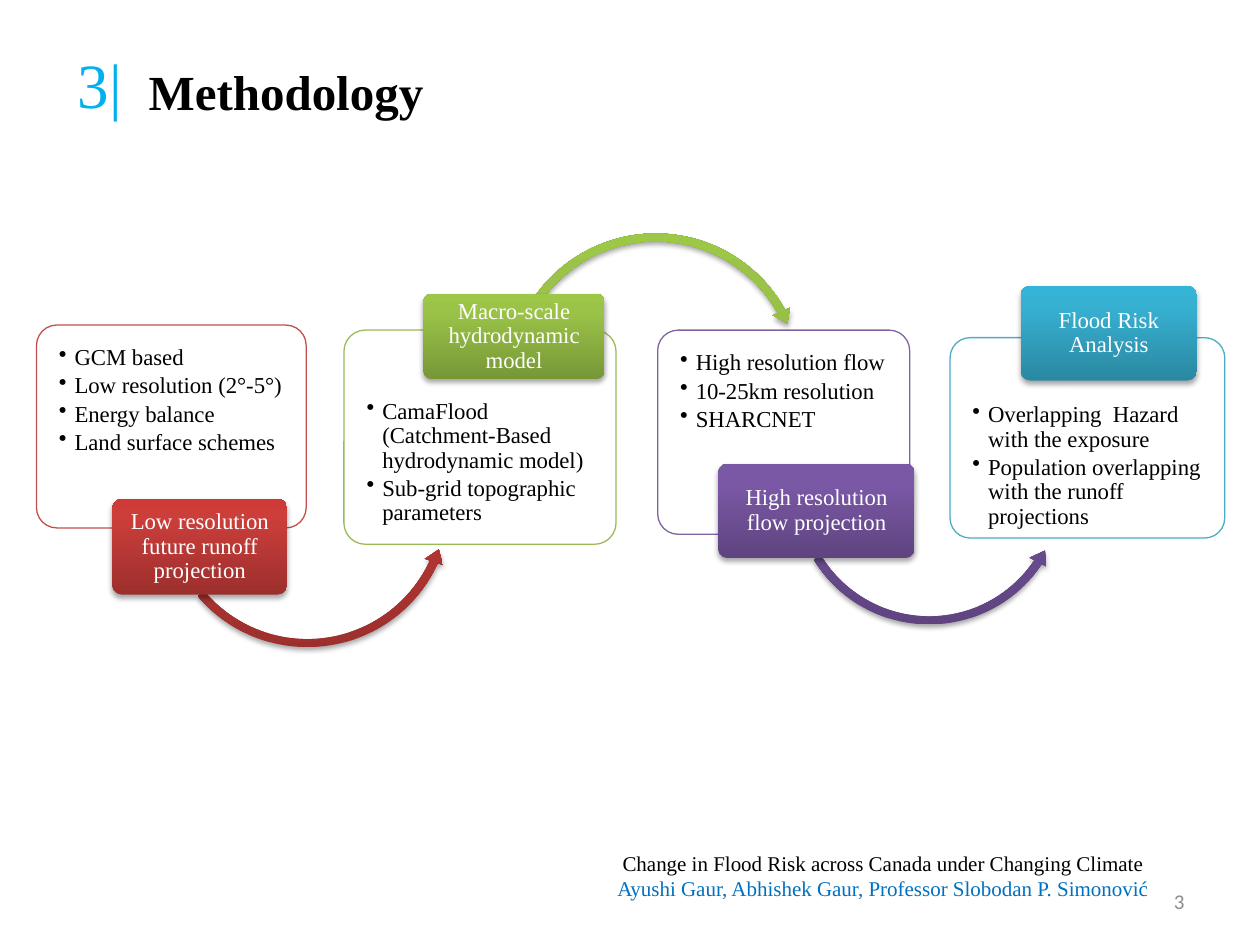
import copy
from dataclasses import dataclass
from typing import Optional

import pptx
import pptx.dml.color
import pptx.enum.shapes
import pptx.enum.text
import pptx.oxml.ns
import pptx.util
from lxml import etree

Inches = pptx.util.Inches
Pt = pptx.util.Pt
qn = pptx.oxml.ns.qn
Shapes = pptx.enum.shapes.MSO_SHAPE
Align = pptx.enum.text.PP_ALIGN
Anchor = pptx.enum.text.MSO_ANCHOR
SERIF = "Times New Roman"
Bounds = tuple[float, float, float, float]


@dataclass
class Arrow:
    preset: Shapes
    bounds: Bounds
    adjustments: tuple[float, ...]


@dataclass
class Stage:
    line: str
    gradient: tuple[str, str, str]  # bottom to top
    card: Bounds
    top_inset: float
    bullets: list[str]
    label: Bounds
    title: str
    arrow: Optional[Arrow] = None


STAGES = [
    Stage("C0504D", ("9C2F2D", "CB3E3A", "CE3B37"),
          (0.29, 2.58, 2.14, 1.61), 0.12,
          ["GCM based", "Low resolution (2°-5°)", "Energy balance",
           "Land surface schemes"],
          (0.89, 3.96, 1.39, 0.76), "Low resolution future runoff projection",
          Arrow(Shapes.LEFT_CIRCULAR_ARROW, (1.26, 2.82, 2.36, 2.36),
                (0.027, 3.307, 14.763, 83.946, 0.032))),
    Stage("9BBB59", ("779737", "9BC348", "9DC746"),
          (2.73, 2.62, 2.16, 1.7), 0.5,
          ["CamaFlood (Catchment-Based hydrodynamic model)",
           "Sub-grid topographic parameters"],
          (3.36, 2.33, 1.44, 0.68), "Macro-scale hydrodynamic model",
          Arrow(Shapes.CIRCULAR_ARROW, (3.99, 1.81, 2.43, 2.43),
                (0.026, 3.212, 198.602, 129.324, 0.031))),
    Stage("8064A2", ("5F4480", "7B58A6", "7C57A8"),
          (5.22, 2.62, 2, 1.62), 0.12,
          ["High resolution flow", "10-25km resolution", "SHARCNET"],
          (5.7, 3.68, 1.56, 0.75), "High resolution flow projection",
          Arrow(Shapes.LEFT_CIRCULAR_ARROW, (6.26, 2.77, 2.23, 2.23),
                (0.029, 3.515, 20.231, 89.205, 0.034))),
    Stage("4BACC6", ("2A88A2", "37B1D2", "34B4D6"),
          (7.54, 2.68, 2.18, 1.59), 0.47,
          ["Overlapping  Hazard with the exposure",
           "Population overlapping with the runoff projections"],
          (8.1, 2.27, 1.4, 0.75), "Flood Risk Analysis"),
]


def rgb(color: str) -> pptx.dml.color.RGBColor:
    return pptx.dml.color.RGBColor.from_string(color)


def set_font(para, size: float, color: str, name: str = SERIF, bold: bool = False) -> None:
    for span in para.runs:
        span.font.name = name
        span.font.size = Pt(size)
        span.font.bold = bold
        span.font.color.rgb = rgb(color)


def set_insets(frame, left: float, top: float, right: float, bottom: float) -> None:
    frame.margin_left, frame.margin_top = Inches(left), Inches(top)
    frame.margin_right, frame.margin_bottom = Inches(right), Inches(bottom)


def add_bullet(para) -> None:
    properties = para._p.get_or_add_pPr()
    properties.set("marL", str(Inches(0.125)))
    properties.set("indent", str(Inches(-0.125)))
    etree.SubElement(properties, qn("a:buChar")).set("char", "•")


def add_preset(page, preset: Shapes, bounds: Bounds):
    shape = page.shapes.add_shape(preset, *map(Inches, bounds))
    shape.shadow.inherit = False
    return shape


def add_glossy(page, preset: Shapes, bounds: Bounds, colors: tuple[str, str, str]):
    """Add a borderless shape with a vertical gradient and a soft shadow below."""
    shape = add_preset(page, preset, bounds)
    shape.line.fill.background()
    shape.fill.gradient()
    shape.fill.gradient_angle = 90
    properties = shape._element.spPr
    stop_list = next(properties.iter(qn("a:gsLst")))
    stop_list.append(copy.deepcopy(stop_list[-1]))
    for stop, position, color in zip(shape.fill.gradient_stops, (0, 0.8, 1), colors):
        stop.position = position
        stop.color.rgb = rgb(color)
    shadow = etree.SubElement(properties.find(qn("a:effectLst")), qn("a:outerShdw"),
                              blurRad=str(Pt(3.1)), dist=str(Pt(1.8)),
                              dir="5400000", rotWithShape="0")
    black = etree.SubElement(shadow, qn("a:srgbClr"), val="000000")
    etree.SubElement(black, qn("a:alpha"), val="35000")
    return shape


def add_card(page, stage: Stage) -> None:
    card = add_preset(page, Shapes.ROUNDED_RECTANGLE, stage.card)
    card.adjustments[0] = 0.1
    card.fill.solid()
    card.fill.fore_color.rgb = rgb("FFFFFF")
    white = next(card._element.spPr.iter(qn("a:srgbClr")))
    etree.SubElement(white, qn("a:alpha"), val="90000")
    card.line.color.rgb = rgb(stage.line)
    card.line.width = Pt(0.75)
    frame = card.text_frame
    frame.word_wrap = True
    frame.vertical_anchor = Anchor.TOP
    set_insets(frame, 0.13, stage.top_inset, 0.13, 0.05)
    frame.text = "\n".join(stage.bullets)
    for para in frame.paragraphs:
        add_bullet(para)
        para.alignment = Align.LEFT
        para.line_spacing = 0.9
        para.space_after = Pt(2)
        set_font(para, 13, "000000")


def add_label(page, stage: Stage) -> None:
    label = add_glossy(page, Shapes.ROUNDED_RECTANGLE, stage.label, stage.gradient)
    label.adjustments[0] = 0.1
    frame = label.text_frame
    frame.word_wrap = True
    frame.vertical_anchor = Anchor.MIDDLE
    set_insets(frame, 0.03, 0.02, 0.03, 0.02)
    frame.text = stage.title
    para = frame.paragraphs[0]
    para.alignment = Align.CENTER
    para.line_spacing = 0.9
    set_font(para, 13, "FFFFFF")


def add_stage(page, stage: Stage) -> None:
    add_card(page, stage)
    if stage.arrow:
        arrow = add_glossy(page, stage.arrow.preset, stage.arrow.bounds, stage.gradient)
        for index, value in enumerate(stage.arrow.adjustments):
            arrow.adjustments[index] = value
    add_label(page, stage)


def add_text(page, bounds: Bounds, lines: list[tuple[str, str]], size: float,
             align: Align, name: str = SERIF, wrap: bool = True):
    """Add a text box from (text, color) lines."""
    frame = page.shapes.add_textbox(*map(Inches, bounds)).text_frame
    frame.word_wrap = wrap
    frame.text = "\n".join(text for text, _ in lines)
    for para, (_, color) in zip(frame.paragraphs, lines):
        para.alignment = align
        set_font(para, size, color, name)
    return frame


def set_title(page, text: str) -> None:
    title = page.shapes.title
    title.left, title.top, title.width, title.height = map(Inches, (1.08, 0.42, 8.28, 1.04))
    frame = title.text_frame
    frame.auto_size = pptx.enum.text.MSO_AUTO_SIZE.NONE
    frame.vertical_anchor = Anchor.TOP
    set_insets(frame, 0.1, 0.07, 0.1, 0.05)
    frame.text = text
    frame.paragraphs[0].alignment = Align.LEFT
    set_font(frame.paragraphs[0], 28, "000000", bold=True)


def main() -> None:
    deck = pptx.Presentation()
    deck.slide_width, deck.slide_height = Inches(10), Inches(7.5)
    page = deck.slides.add_slide(deck.slide_layouts[5])
    set_title(page, "Methodology")
    for stage in STAGES:
        add_stage(page, stage)
    number = add_text(page, (7.17, 6.95, 2.33, 0.4), [("3", "8C8C8C")], 12,
                      Align.RIGHT, "Calibri")
    number.vertical_anchor = Anchor.MIDDLE
    add_text(page, (0.52, 0.31, 0.56, 0.71), [("3|", "00B0F0")], 36, Align.LEFT, wrap=False)
    add_text(page, (4.76, 6.7, 4.5, 0.5),
             [("Change in Flood Risk across Canada under Changing Climate", "000000"),
              ("Ayushi Gaur, Abhishek Gaur, Professor Slobodan P. Simonović", "0070C0")],
             12, Align.CENTER)
    deck.save("out.pptx")


if __name__ == "__main__":
    main()
